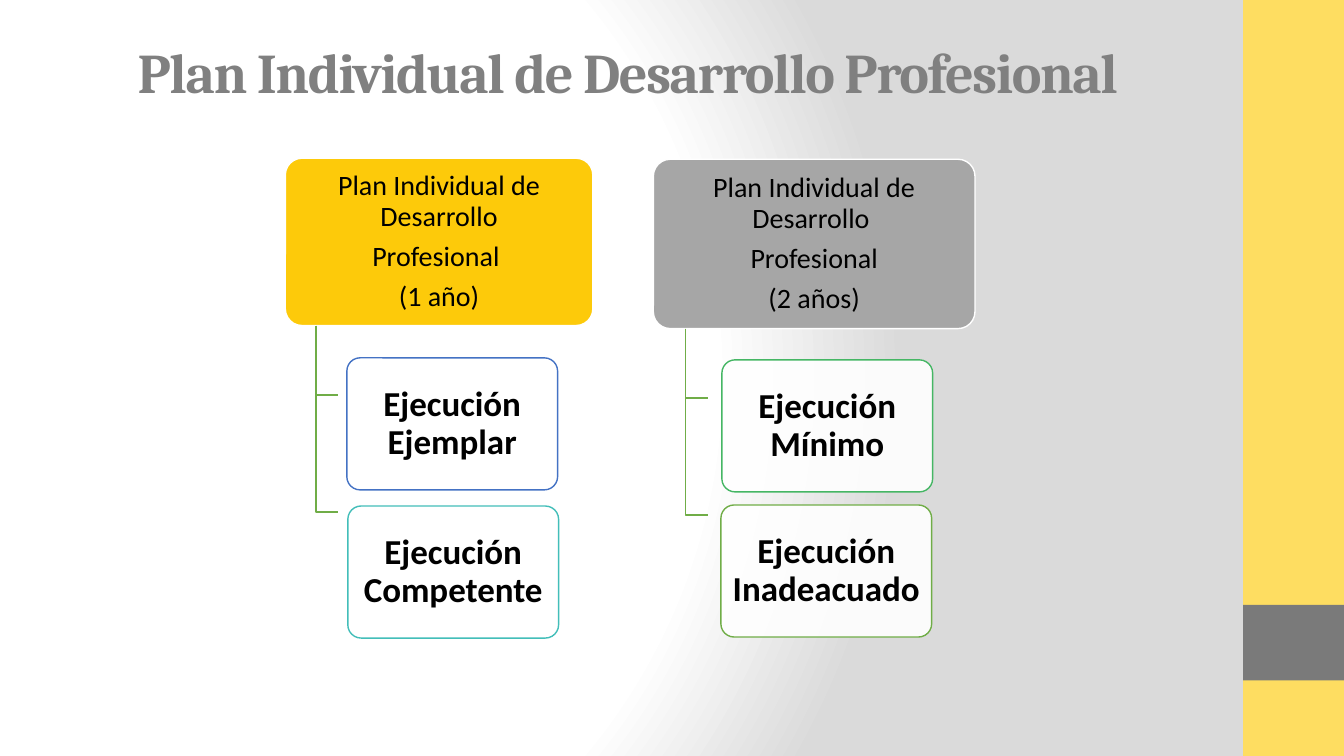
from lxml import etree
from pptx import Presentation
from pptx.dml.color import RGBColor
from pptx.enum.shapes import MSO_SHAPE
from pptx.enum.text import MSO_ANCHOR, MSO_AUTO_SIZE, PP_ALIGN
from pptx.oxml import parse_xml
from pptx.oxml.ns import nsdecls, qn
from pptx.util import Inches, Pt

RECT = MSO_SHAPE.RECTANGLE
ROUND = MSO_SHAPE.ROUNDED_RECTANGLE
MIDDLE = MSO_ANCHOR.MIDDLE
CENTER = PP_ALIGN.CENTER
GROW = MSO_AUTO_SIZE.SHAPE_TO_FIT_TEXT

COLORS = {
    "white": "FFFFFF", "black": "000000", "fade": "DADADA",
    "band": "FEDD61", "block": "7A7A7A", "title": "808080",
    "gold": "FDCA0A", "grey": "A6A6A6", "blue": "4472C4",
    "teal": "43BEB9", "mint": "45B664", "green": "70AD47",
}

PLANS = [
    {"box": (2.83, 1.57, 3.05, 1.66), "fill": "gold",
     "lines": ["Plan Individual de Desarrollo", "Profesional ", "(1 año)"],
     "levels": [(3.44, 3.55, "blue", "Ejecución Ejemplar"),
                (3.45, 5.02, "teal", "Ejecución Competente")]},
    {"box": (6.48, 1.58, 3.19, 1.68), "fill": "grey",
     "lines": ["Plan Individual de Desarrollo ", "Profesional", "(2 años)"],
     "levels": [(7.16, 3.57, "mint", "Ejecución Mínimo"),
                (7.15, 5.01, "green", "Ejecución Inadeacuado ")]},
]
LEVEL_SIZE = (2.09, 1.31)
DROPS = (0.69, 1.85)
STUB = 0.22


def rgb(name):
    return RGBColor.from_string(COLORS[name])


def paint_back(slide):
    stops = "".join(
        f'<a:gs pos="{pos * 1000}"><a:srgbClr val="{COLORS[name]}"/></a:gs>'
        for pos, name in ((0, "white"), (75, "white"), (100, "fade")))
    back = parse_xml(
        f'<p:bg {nsdecls("p", "a")}><p:bgPr><a:gradFill rotWithShape="1">'
        f'<a:gsLst>{stops}</a:gsLst><a:path path="circle">'
        '<a:fillToRect l="20000" t="50000" r="100000" b="50000"/></a:path>'
        '</a:gradFill><a:effectLst/></p:bgPr></p:bg>')
    slide.element.cSld.insert(0, back)


def add_box(slide, kind, box, fill, line=None):
    shape = slide.shapes.add_shape(kind, *map(Inches, box))
    shape.shadow.inherit = False
    shape.fill.solid()
    shape.fill.fore_color.rgb = rgb(fill)
    if line:
        shape.line.color.rgb = rgb(line)
        shape.line.width = Pt(1)
    else:
        shape.line.fill.background()
    return shape


def add_card(slide, box, fill, line, texts, size, side, bold=False):
    card = add_box(slide, ROUND, box, fill, line)
    card.adjustments[0] = 0.1
    frame = card.text_frame
    frame.word_wrap = True
    frame.vertical_anchor = MIDDLE
    frame.margin_left = frame.margin_right = Inches(side)
    frame.margin_top = frame.margin_bottom = Inches(0.03)
    frame.text = "\n".join(texts)
    for para in frame.paragraphs:
        para.alignment = CENTER
        para.line_spacing = 0.9
        para.space_after = Pt(7)
        font = para.font
        font.name, font.size, font.bold = "Calibri", Pt(size), bold
        font.color.rgb = rgb("black")
    return card


def add_branch(slide, left, top, drop):
    low = Inches(top + drop)
    pen = slide.shapes.build_freeform(Inches(left), Inches(top))
    pen.add_line_segments(
        [(Inches(left), low), (Inches(left + STUB), low)], close=False)
    branch = pen.convert_to_shape()
    branch.shadow.inherit = False
    branch.fill.background()
    branch.line.color.rgb = rgb("green")
    branch.line.width = Pt(1)


def add_plan(slide, plan):
    left, top, width, height = plan["box"]
    add_card(slide, plan["box"], plan["fill"], "white", plan["lines"], 20, 0.04)
    for drop, (x, y, line, text) in zip(DROPS, plan["levels"]):
        add_branch(slide, left + width / 10, top + height, drop)
        card = add_card(slide, (x, y, *LEVEL_SIZE), "white", line,
                        [text], 25, 0.05, True)
        color = card.fill._xPr.find(qn("a:solidFill"))[0]
        etree.SubElement(color, qn("a:alpha"), val="90000")


def set_title(slide, text):
    title = slide.shapes.title
    title.left, title.top = Inches(0.54), Inches(0.32)
    title.width, title.height = Inches(11.48), Inches(0.77)
    frame = title.text_frame
    frame.text = text
    frame.word_wrap = True
    frame.auto_size = GROW
    para = frame.paragraphs[0]
    para.alignment = CENTER
    font = para.font
    font.name, font.size, font.bold = "Cambria", Pt(40), True
    font.color.rgb = rgb("title")
    para.runs[0].font._element.set("spc", "-100")


def main():
    deck = Presentation()
    deck.slide_width, deck.slide_height = Inches(13.33), Inches(7.5)
    slide = deck.slides.add_slide(deck.slide_layouts[5])
    paint_back(slide)
    add_box(slide, RECT, (12.33, 0, 1, 7.5), "band")
    add_box(slide, RECT, (12.33, 6, 1, 0.75), "block")
    for plan in PLANS:
        add_plan(slide, plan)
    set_title(slide, "Plan Individual de Desarrollo Profesional ")
    deck.save("out.pptx")


if __name__ == "__main__":
    main()
